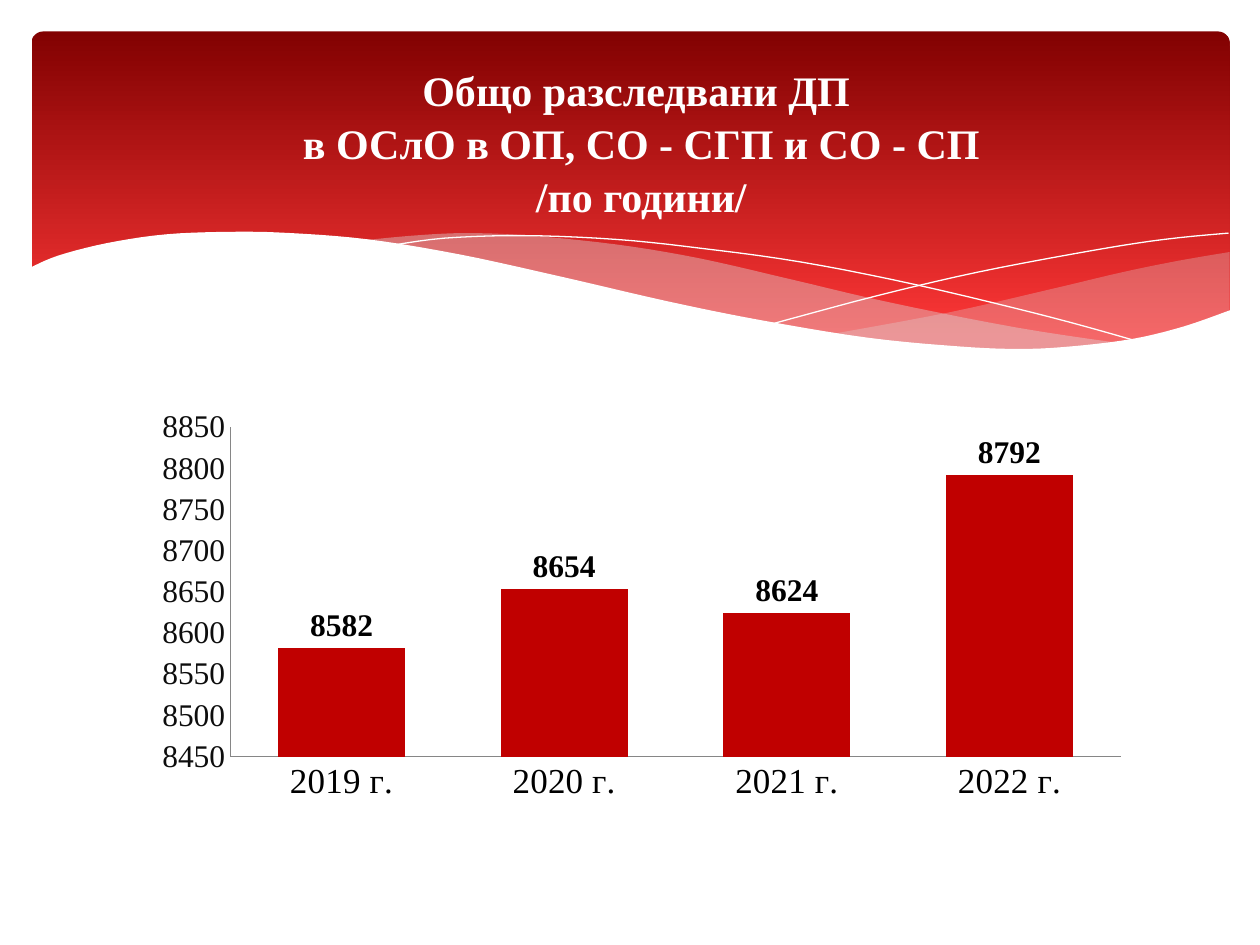
from pptx import Presentation
from pptx.chart.data import CategoryChartData
from pptx.dml.color import RGBColor
from pptx.enum.chart import XL_CHART_TYPE, XL_LABEL_POSITION, XL_TICK_MARK
from pptx.enum.shapes import MSO_SHAPE
from pptx.enum.text import MSO_ANCHOR, MSO_AUTO_SIZE, PP_ALIGN
from pptx.oxml import parse_xml
from pptx.oxml.ns import nsdecls, qn
from pptx.util import Inches, Pt
from lxml import etree

COLUMN_CHART = XL_CHART_TYPE.COLUMN_CLUSTERED
OUTSIDE = XL_LABEL_POSITION.OUTSIDE_END
NO_TICKS = XL_TICK_MARK.NONE
ROUNDED = MSO_SHAPE.ROUNDED_RECTANGLE
MIDDLE = MSO_ANCHOR.MIDDLE
FIXED_SIZE = MSO_AUTO_SIZE.NONE
CENTER = PP_ALIGN.CENTER
TITLE_ONLY = 5
COLUMNS, ROWS = 10, 7.5

TITLE = "Общо разследвани ДП \vв ОСлО в ОП, СО - СГП и СО - СП\v/по години/"
CASES = {"2019 г.": 8582, "2020 г.": 8654, "2021 г.": 8624, "2022 г.": 8792}

RIGHT_BAND = (
    [(9.76, 2), (9.35, 2.07), (8.91, 2.16), (8.32, 2.3), (7.53, 2.48), (6.61, 2.65)],
    [(6.61, 2.65), (7.05, 2.71), (7.45, 2.75), (8.03, 2.78), (8.54, 2.76),
     (8.97, 2.7), (9.35, 2.62), (9.76, 2.47)],
)
LONG_BAND = (
    [(8.93, 2.73), (8.07, 2.6), (7.06, 2.4), (6.29, 2.22), (5.55, 2.05),
     (4.89, 1.94), (4.2, 1.87), (3.7, 1.85), (3.28, 1.87), (2.86, 1.91)],
    [(2.86, 1.91), (3.42, 1.99), (4.04, 2.11), (4.91, 2.32), (5.66, 2.48),
     (6.34, 2.61), (6.95, 2.7), (7.48, 2.76), (8.07, 2.78), (8.48, 2.77), (8.93, 2.73)],
)
FALLING_LINE = ([(3.09, 1.95), (3.53, 1.89), (4.16, 1.87), (4.89, 1.9), (5.56, 1.97),
                 (6.36, 2.08), (7.27, 2.26), (8.31, 2.51), (9.07, 2.72)],)
RISING_LINE = ([(6.13, 2.57), (6.95, 2.35), (7.76, 2.16), (8.66, 1.99),
                (9.24, 1.9), (9.75, 1.85)],)
WHITE_WAVE = (
    [(9.77, 2.46), (9.4, 2.59), (8.99, 2.69), (8.5, 2.75), (8.09, 2.77), (7.61, 2.75),
     (6.88, 2.68), (6.03, 2.54), (5.29, 2.39), (4.47, 2.2), (3.65, 2.02), (2.92, 1.9),
     (2.3, 1.85), (1.85, 1.84), (1.32, 1.86), (0.85, 1.93), (0.46, 2.03), (0.23, 2.13)],
    [(0.23, 3.29), (9.77, 3.29)],
)


def color(hex_text):
    return RGBColor.from_string(hex_text)


def smooth(points, steps=5):
    """Return points along a Catmull-Rom curve through the given ones."""
    padded = [points[0], *points, points[-1]]
    curve = [points[0]]
    for before, start, end, after in zip(padded, padded[1:], padded[2:], padded[3:]):
        for step in range(1, steps + 1):
            t = step / steps
            curve.append(tuple(
                (2 * b + (c - a) * t + (2 * a - 5 * b + 4 * c - d) * t ** 2
                 + (3 * b - a - 3 * c + d) * t ** 3) / 2
                for a, b, c, d in zip(before, start, end, after)))
    return curve


class SlideBuilder:
    """Holds the style and the slide; lengths are grid columns and rows."""
    font = "Times New Roman"
    chart_font = "Cabin"
    white, black, bar, axis = "FFFFFF", "000000", "C00000", "868686"

    def __init__(self, deck):
        self.slide = deck.slides.add_slide(deck.slide_layouts[TITLE_ONLY])
        self.shapes = self.slide.shapes
        self.column = deck.slide_width / COLUMNS
        self.row = deck.slide_height / ROWS

    def place(self, left, top, width, height):
        return (round(left * self.column), round(top * self.row),
                round(width * self.column), round(height * self.row))

    def style_font(self, font, size, hex_text, bold=False, name=None):
        font.name, font.size, font.bold = name or self.font, Pt(size), bold
        font.color.rgb = color(hex_text)

    def banner(self, area, top_color, bottom_color):
        box = self.shapes.add_shape(ROUNDED, *self.place(*area))
        box.adjustments[0] = 0.034
        box.shadow.inherit = False
        box.line.fill.background()
        box.fill.gradient()
        box.fill.gradient_angle = 270
        stops = box.fill.gradient_stops
        for stop, position, hex_text in zip(stops, (0, 0.9), (top_color, bottom_color)):
            stop.position, stop.color.rgb = position, color(hex_text)

    def curve(self, edges, closed):
        points = [(x * self.column, y * self.row) for edge in edges for x, y in smooth(edge)]
        builder = self.shapes.build_freeform(*map(round, points[0]))
        builder.add_line_segments([tuple(map(round, p)) for p in points[1:]], close=closed)
        shape = builder.convert_to_shape()
        shape.shadow.inherit = False
        return shape

    def wave(self, edges, hex_text, opacity=100):
        shape = self.curve(edges, closed=True)
        shape.line.fill.background()
        shape.fill.solid()
        shape.fill.fore_color.rgb = color(hex_text)
        fill_color = shape.fill._xPr.find(".//" + qn("a:srgbClr"))
        etree.SubElement(fill_color, qn("a:alpha"), val=str(opacity * 1000))

    def hairline(self, edges):
        shape = self.curve(edges, closed=False)
        shape.fill.background()
        shape.line.color.rgb = color(self.white)
        shape.line.width = Pt(0)

    def title(self, text, area):
        box = self.shapes.title
        box.left, box.top, box.width, box.height = self.place(*area)
        self.shapes._spTree.append(box._element)  # bring in front of the banner
        frame = box.text_frame
        frame.text = text
        frame.word_wrap, frame.auto_size = True, FIXED_SIZE
        frame.vertical_anchor = MIDDLE
        para = frame.paragraphs[0]
        para.alignment, para.line_spacing = CENTER, 1.05
        for span in para.runs:
            self.style_font(span.font, 24, self.white, bold=True)
            span.font.fill._xPr.find(qn("a:solidFill")).addnext(parse_xml(
                f'<a:effectLst {nsdecls("a")}><a:outerShdw blurRad="100000" dist="200000" '
                'dir="2700000"><a:srgbClr val="000000"><a:alpha val="40000"/>'
                '</a:srgbClr></a:outerShdw></a:effectLst>'))

    def column_chart(self, values, area, plot_area):
        data = CategoryChartData()
        data.categories = values.keys()
        data.add_series("Series 1", values.values())
        chart = self.shapes.add_chart(COLUMN_CHART, *self.place(*area), data).chart
        chart.has_legend = chart.has_title = False
        self.style_font(chart.font, 18, self.black, name=self.chart_font)
        plot = chart.plots[0]
        plot.gap_width, plot.vary_by_categories = 75, False
        fill = plot.series[0].format.fill
        fill.solid()
        fill.fore_color.rgb = color(self.bar)
        plot.has_data_labels = True
        labels = plot.data_labels
        labels.show_value, labels.position = True, OUTSIDE
        self.style_font(labels.font, 18, self.black, bold=True)

        axes = ((chart.category_axis, 20, self.black), (chart.value_axis, 18, "0D0D0D"))
        for axis, size, hex_text in axes:
            axis.has_major_gridlines = False
            axis.major_tick_mark = axis.minor_tick_mark = NO_TICKS
            axis.format.line.color.rgb = color(self.axis)
            self.style_font(axis.tick_labels.font, size, hex_text)
        scale = chart.value_axis
        scale.minimum_scale, scale.maximum_scale, scale.major_unit = 8450, 8850, 50
        self.set_plot_area(chart, plot_area)

    def set_plot_area(self, chart, shares):
        plot_area = chart._chartSpace.find(".//" + qn("c:plotArea"))
        for layout in plot_area.findall(qn("c:layout")):
            plot_area.remove(layout)
        sizes = "".join(f'<c:{key} val="{share}"/>' for key, share in zip("xywh", shares))
        plot_area.insert(0, parse_xml(
            f'<c:layout {nsdecls("c")}><c:manualLayout><c:layoutTarget val="inner"/>'
            f'<c:xMode val="edge"/><c:yMode val="edge"/>{sizes}</c:manualLayout></c:layout>'))


def main():
    deck = Presentation()
    deck.slide_width, deck.slide_height = Inches(COLUMNS), Inches(ROWS)
    page = SlideBuilder(deck)
    page.banner((0.25, 0.25, 9.51, 2.7), "820101", "FE3737")
    page.wave(RIGHT_BAND, "DEDEE0", opacity=29)
    page.wave(LONG_BAND, "DEDEE0", opacity=40)
    page.hairline(FALLING_LINE)
    page.hairline(RISING_LINE)
    page.wave(WHITE_WAVE, page.white)
    page.title(TITLE, (0.59, 0.44, 9, 1.37))
    page.column_chart(CASES, (0.75, 2.65, 8.62, 4.17), (0.125, 0.178, 0.82, 0.627))
    deck.save("out.pptx")


if __name__ == "__main__":
    main()
